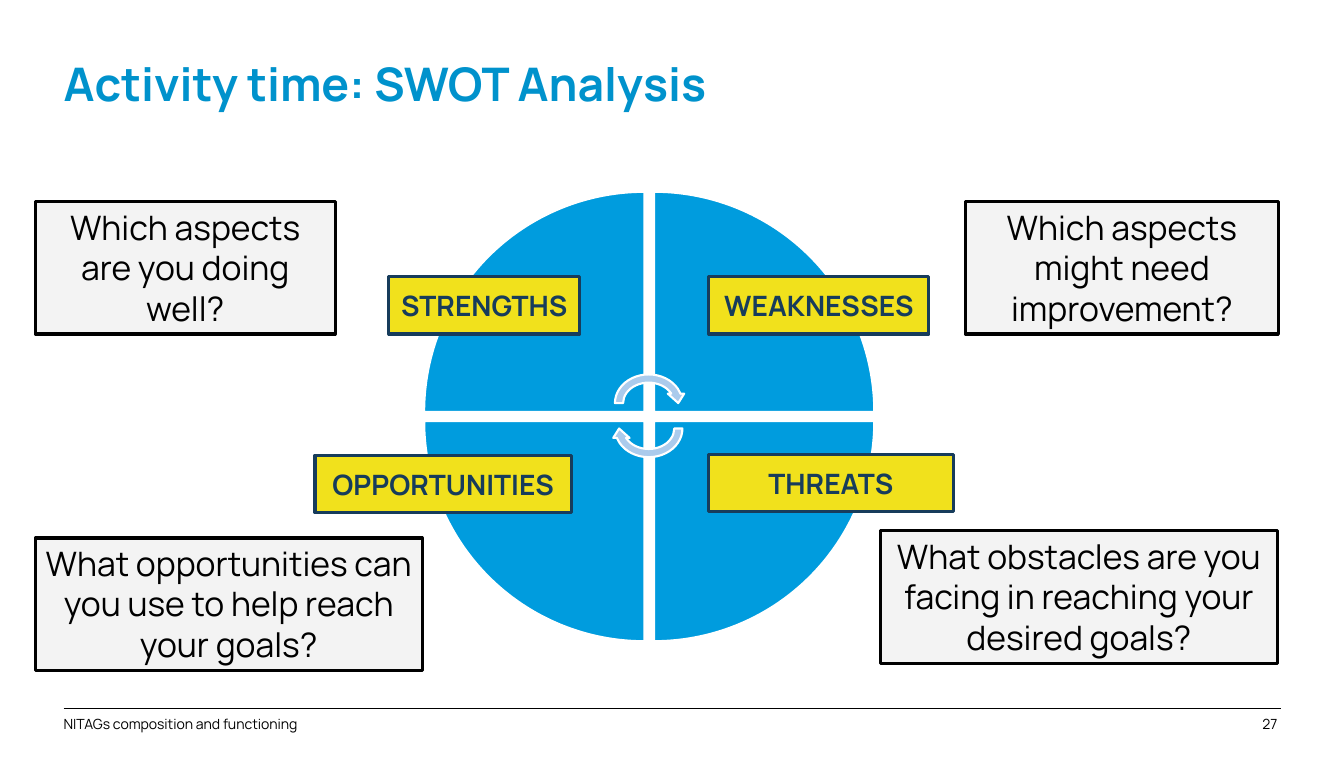
from lxml import etree
from pptx import Presentation, util as u
from pptx.dml.color import RGBColor
from pptx.enum import shapes, text
from pptx.oxml.ns import qn

KIND = shapes.MSO_SHAPE
ALIGN = text.PP_ALIGN
ANCHOR = text.MSO_ANCHOR


def color(value):
    """Turn a hex string into a colour."""
    return RGBColor.from_string(value)


class SlideBuilder:
    """Draw styled elements, placed in percent of the slide's width and height."""

    FONT = "Manrope"
    TITLE = dict(size=u.Pt(33), bold=True)
    FOOTER = dict(size=u.Pt(10))
    LABEL = dict(size=u.Pt(20), bold=True)
    QUESTION = dict(size=u.Pt(24))

    def __init__(self, deck):
        """Add a blank page to the deck."""
        self.deck = deck
        self.page = deck.slides.add_slide(deck.slide_layouts[6])

    def place(self, left, top, width, height):
        """Turn percentages into slide lengths."""
        across, down = self.deck.slide_width / 100, self.deck.slide_height / 100
        return [round(n) for n in (left * across, top * down, width * across, height * down)]

    def fill_text(self, box, words, ink, style, align=ALIGN.LEFT, spacing=None):
        """Put one styled paragraph into a box."""
        box.text_frame.word_wrap = True
        para = box.text_frame.paragraphs[0]
        para.alignment = align
        para.line_spacing = spacing
        span = para.add_run()
        span.text = words
        span.font.color.rgb = color(ink)
        for name, value in dict(style, name=self.FONT).items():
            setattr(span.font, name, value)

    def text(self, words, area, ink, style, **layout):
        """Add a text box without margins."""
        box = self.page.shapes.add_textbox(*self.place(*area))
        for side in ("left", "top", "right", "bottom"):
            setattr(box.text_frame, f"margin_{side}", 0)
        self.fill_text(box, words, ink, style, **layout)

    def shape(self, kind, area, fill, line, weight, turn=0):
        """Add a filled and outlined preset shape."""
        box = self.page.shapes.add_shape(kind, *self.place(*area))
        box.shadow.inherit = False
        box.fill.solid()
        box.fill.fore_color.rgb = color(fill)
        box.line.color.rgb = color(line)
        box.line.width = u.Pt(weight)
        box.rotation = turn
        return box

    def label(self, words, area):
        """Add a yellow quadrant label."""
        box = self.shape(KIND.RECTANGLE, area, "F1E11C", "173C5B", 2.25)
        box.text_frame.vertical_anchor = ANCHOR.MIDDLE
        self.fill_text(box, words, "173C5B", self.LABEL, ALIGN.CENTER)

    def question(self, words, area):
        """Add a grey question box."""
        box = self.shape(KIND.RECTANGLE, area, "F3F3F3", "000000", 2.25)
        box.text_frame.vertical_anchor = ANCHOR.TOP
        self.fill_text(box, words, "000000", self.QUESTION, ALIGN.CENTER)

    def rule(self, left, top, width):
        """Add a thin horizontal line."""
        x, y, length, _ = self.place(left, top, width, 0)
        line = self.page.shapes.add_connector(shapes.MSO_CONNECTOR.STRAIGHT, x, y, x + length, y)
        line.line.color.rgb = color("000000")
        line.line.width = u.Pt(0.75)
        etree.SubElement(line._element.spPr, qn("a:effectLst"))


def main():
    """Build the SWOT slide."""
    deck = Presentation()
    deck.slide_width, deck.slide_height = u.Inches(13.31), u.Inches(7.52)
    slide = SlideBuilder(deck)

    margin = 4.73
    slide.rule(margin, 93.35, 90.61)
    slide.text("27", (87.68, 94.28, 7.36, 1.6), "000000", slide.FOOTER, align=ALIGN.RIGHT)
    slide.text("Activity time: SWOT Analysis", (margin, 8.1, 90.31, 6.9),
               "0092CC", slide.TITLE, spacing=0.9)
    slide.text("NITAGs composition and functioning", (margin, 94.28, 62.13, 1.6),
               "000000", slide.FOOTER)

    for turn, (column, row) in enumerate([(0, 0), (1, 0), (1, 1), (0, 1)]):
        area = (31.56 + column * 17.11, 25.27 + row * 30.22, 16.38, 28.99)
        slide.shape(KIND.PIE_WEDGE, area, "009CDE", "FFFFFF", 1.5, turn * 90)
    for top, turn in ((48.8, 0), (52.13, 180)):
        slide.shape(KIND.CIRCULAR_ARROW, (45.45, top, 5.63, 8.64), "ABCBEC", "FFFFFF", 1.5, turn)

    for words, left, top, width in (
        ("WEAKNESSES", 52.74, 36.44, 16.38),
        ("STRENGTHS", 28.93, 36.44, 14.2),
        ("OPPORTUNITIES", 23.44, 59.97, 19.08),
        ("THREATS", 52.74, 59.84, 18.18),
    ):
        slide.label(words, (left, top, width, 7.58))

    for words, left, top, width in (
        ("Which aspects are you doing well?", 2.63, 26.6, 22.31),
        ("Which aspects might need improvement?", 71.83, 26.6, 23.29),
        ("What opportunities can you use to help reach your goals?", 2.63, 70.88, 28.78),
        ("What obstacles are you facing in reaching your desired goals?", 65.51, 69.95, 29.53),
    ):
        slide.question(words, (left, top, width, 17.42))

    deck.save("out.pptx")


if __name__ == "__main__":
    main()
